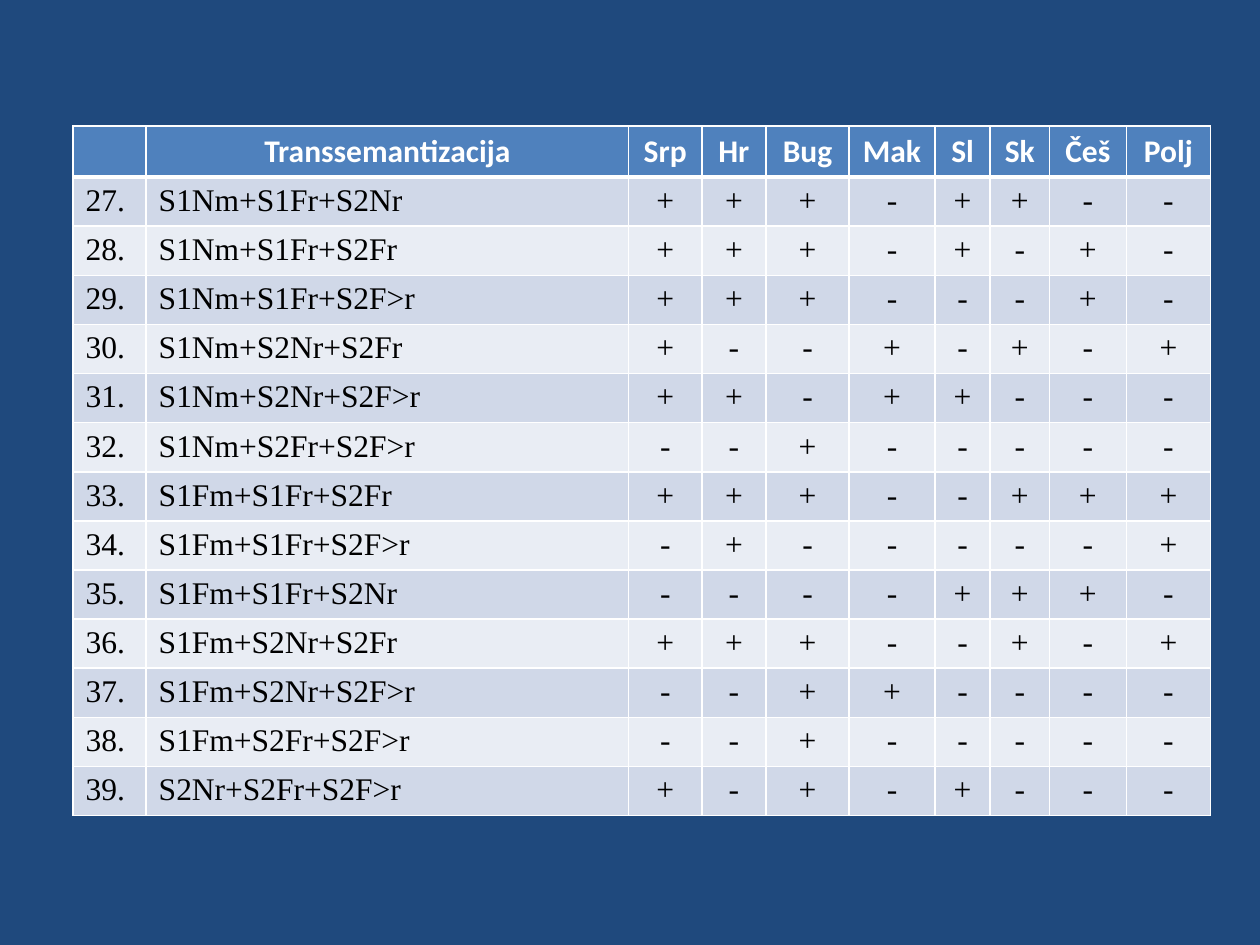
from lxml import etree
from pptx import Presentation
from pptx import util as u
from pptx.dml.color import RGBColor
from pptx.enum import text
from pptx.oxml import ns

NAVY = RGBColor(0x1F, 0x49, 0x7D)
BLUE = RGBColor(0x4F, 0x81, 0xBD)
DARK = RGBColor(0xD0, 0xD8, 0xE8)
PALE = RGBColor(0xE9, 0xED, 0xF4)
WHITE = RGBColor(0xFF, 0xFF, 0xFF)
BLACK = RGBColor(0, 0, 0)

HEAD = ["", "Transsemantizacija", "Srp", "Hr", "Bug", "Mak", "Sl", "Sk", "Češ", "Polj"]
COLS = [0.58, 3.83, 0.58, 0.51, 0.66, 0.68, 0.44, 0.47, 0.61, 0.67]
FIRST = 27
ROWS = [
    ("S1Nm+S1Fr+S2Nr", "+++-++--"),
    ("S1Nm+S1Fr+S2Fr", "+++-+-+-"),
    ("S1Nm+S1Fr+S2F>r", "+++---+-"),
    ("S1Nm+S2Nr+S2Fr", "+--+-+-+"),
    ("S1Nm+S2Nr+S2F>r", "++-++---"),
    ("S1Nm+S2Fr+S2F>r", "--+-----"),
    ("S1Fm+S1Fr+S2Fr", "+++--+++"),
    ("S1Fm+S1Fr+S2F>r", "-+-----+"),
    ("S1Fm+S1Fr+S2Nr", "----+++-"),
    ("S1Fm+S2Nr+S2Fr", "+++--+-+"),
    ("S1Fm+S2Nr+S2F>r", "--++----"),
    ("S1Fm+S2Fr+S2F>r", "--+-----"),
    ("S2Nr+S2Fr+S2F>r", "+-+-+---"),
]


def edge(cell, side, width):
    props = cell._tc.get_or_add_tcPr()
    line = etree.SubElement(props, ns.qn(f"a:ln{side}"), w=str(u.Pt(width)))
    fill = etree.SubElement(line, ns.qn("a:solidFill"))
    etree.SubElement(fill, ns.qn("a:srgbClr"), val=str(WHITE))


def write(cell, words, font, color, bold, center):
    para = cell.text_frame.paragraphs[0]
    para.font.size = u.Pt(18)
    if center:
        para.alignment = text.PP_ALIGN.CENTER
    if words:
        run = para.add_run()
        run.text = words
        run.font.name = font
        run.font.size = u.Pt(18)
        run.font.bold = bold
        run.font.color.rgb = color


def style(cell, fill, top, bottom):
    for side, width in zip("LRTB", (1, 1, top, bottom)):
        edge(cell, side, width)
    cell.fill.solid()
    cell.fill.fore_color.rgb = fill


def add_grid(slide):
    lines = [HEAD]
    for num, (name, signs) in enumerate(ROWS, FIRST):
        lines.append([f"{num}.", name, *signs])
    frame = slide.shapes.add_table(
        len(lines), len(COLS), u.Inches(0.58), u.Inches(1),
        u.Inches(sum(COLS)), u.Inches(0.39 * len(lines)))
    grid = frame.table
    for col, width in zip(grid.columns, COLS):
        col.width = u.Inches(width)
    for r, line in enumerate(lines):
        grid.rows[r].height = u.Inches(0.39)
        for c, words in enumerate(line):
            cell = grid.cell(r, c)
            if r == 0:
                style(cell, BLUE, 1, 3)
                write(cell, words, "Calibri", WHITE, True, True)
            else:
                style(cell, DARK if r % 2 else PALE, 3 if r == 1 else 1, 1)
                write(cell, words, "Times New Roman", BLACK, False, c > 1)


def main():
    deck = Presentation()
    deck.slide_width = u.Inches(10)
    deck.slide_height = u.Inches(7.5)
    slide = deck.slides.add_slide(deck.slide_layouts[6])
    slide.background.fill.solid()
    slide.background.fill.fore_color.rgb = NAVY
    add_grid(slide)
    deck.save("out.pptx")


if __name__ == "__main__":
    main()
